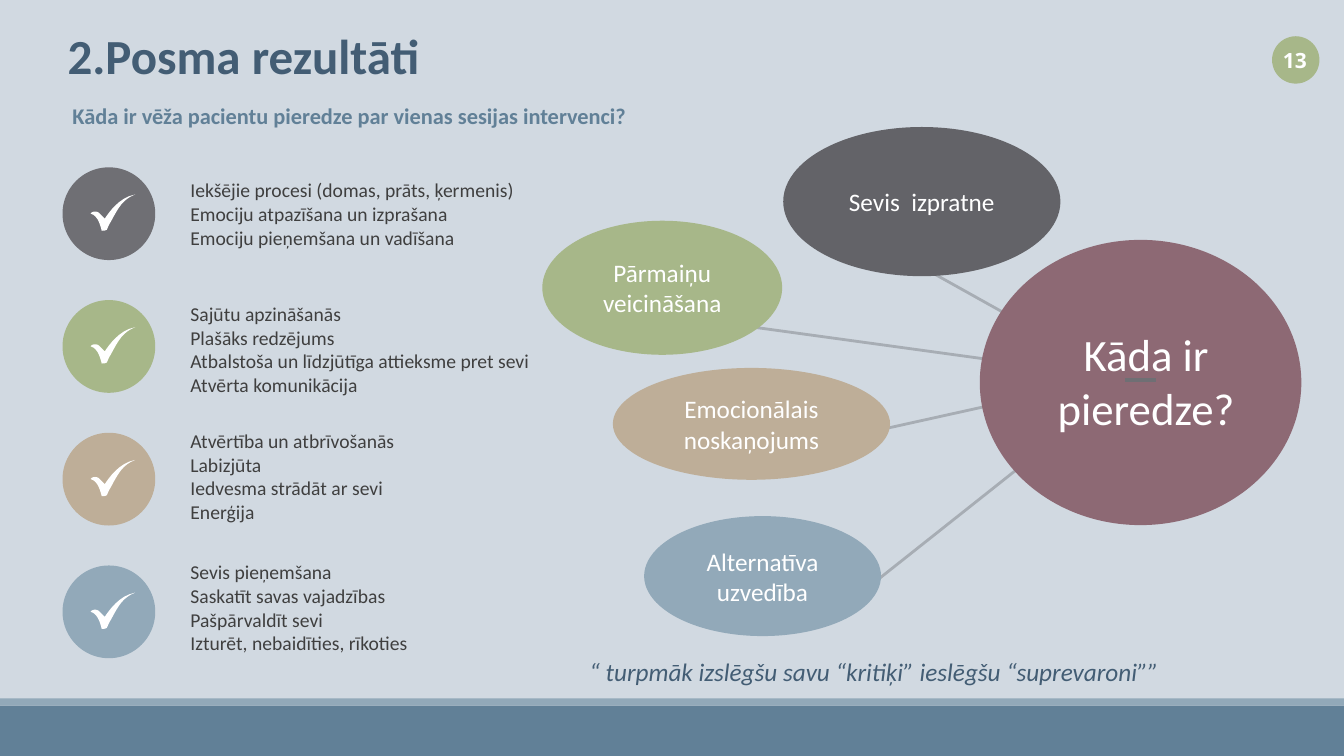
from pptx import Presentation
from pptx.dml.color import RGBColor
from pptx.enum.shapes import MSO_CONNECTOR, MSO_SHAPE
from pptx.enum.text import MSO_ANCHOR, PP_ALIGN
from pptx.oxml.ns import qn
from pptx.util import Pt
from lxml.etree import SubElement

PX = 9144  # 100 px to the inch
WIDTH, HEIGHT = 1333, 750

NAVY, STEEL, SKY = "435D74", "618097", "92A9B9"
GREEN, SAND, GREY, CHARCOAL = "A7B789", "BEAE98", "6F6F74", "636368"
PLUM, INK, WHITE, BACKGROUND = "8D6974", "3F3F3F", "FFFFFF", "D1D9E1"

TITLE = "2.Posma rezultāti"
QUESTION = "Kāda ir vēža pacientu pieredze par vienas sesijas intervenci?"
QUOTE = "“ turpmāk izslēgšu savu “kritiķi” ieslēgšu “suprevaroni””"
HUB = "Kāda ir pieredze?"
PAGE_NUMBER = "13"

# colour, top of the text, lines
FINDINGS = [
    (GREY, 172, ["Iekšējie procesi (domas, prāts, ķermenis)",
                 "Emociju atpazīšana un izprašana",
                 "Emociju pieņemšana un vadīšana"]),
    (GREEN, 295, ["Sajūtu apzināšanās",
                  "Plašāks redzējums",
                  "Atbalstoša un līdzjūtīga attieksme pret sevi",
                  "Atvērta komunikācija"]),
    (SAND, 421, ["Atvērtība un atbrīvošanās",
                 "Labizjūta",
                 "Iedvesma strādāt ar sevi",
                 "Enerģija"]),
    (SKY, 551, ["Sevis pieņemšana",
                "Saskatīt savas vajadzības",
                "Pašpārvaldīt sevi",
                "Izturēt, nebaidīties, rīkoties"]),
]
FIRST_BADGE, LAST_BADGE, BADGE_SIZE = 166, 561, 92

# text, colour, left, top, width, height
THEMES = [
    ("Sevis  izpratne", CHARCOAL, 777, 126, 275, 148),
    ("Pārmaiņu veicināšana", GREEN, 538, 219, 238, 133),
    ("Emocionālais noskaņojums", SAND, 608, 365, 275, 111),
    ("Alternatīva uzvedība", SKY, 639, 512, 235, 119),
]
SPOKES = [
    [(879, 245), (1110, 374), (866, 428)],
    [(729, 322), (1122, 376), (861, 583)],
]

# Cubic curves of the tick: two control points and an end point each
TICK_START = (0, 19)
TICK_CURVES = [
    ((1, 17), (5, 16), (8, 18)),
    ((10, 20), (12, 22), (14, 24)),
    ((18, 18), (28, 3), (44, 0)),
    ((32, 5), (28, 12), (20, 27)),
    ((18, 30), (17, 33), (16, 35)),
    ((14, 36), (13, 36), (11, 36)),
    ((10, 33), (8, 21), (0, 19)),
]
CURVE_STEPS = 8


def px(*lengths):
    return [round(length * PX) for length in lengths]


def colour(code):
    return RGBColor.from_string(code)


def write(shape, text, size, code, font="Calibri", bold=False, italic=False,
          align=PP_ALIGN.LEFT, anchor=MSO_ANCHOR.TOP, spacing=None):
    """Fill the shape with one paragraph per line of text."""
    frame = shape.text_frame
    frame.word_wrap = True
    frame.vertical_anchor = anchor
    frame.text = text
    for para in frame.paragraphs:
        para.alignment = align
        para.line_spacing = spacing
        for span in para.runs:
            span.font.name = font
            span.font.size = Pt(size)
            span.font.bold = bold
            span.font.italic = italic
            span.font.color.rgb = colour(code)


def add_text(page, place, text, size, code, **style):
    write(page.shapes.add_textbox(*px(*place)), text, size, code, **style)


def add_filled(shapes, kind, place, code):
    shape = shapes.add_shape(kind, *px(*place))
    paint(shape, code)
    return shape


def paint(shape, code):
    shape.shadow.inherit = False
    shape.fill.solid()
    shape.fill.fore_color.rgb = colour(code)
    shape.line.fill.background()


def add_outline(shapes, points, close):
    builder = shapes.build_freeform(*px(*points[0]))
    builder.add_line_segments([px(*point) for point in points[1:]], close=close)
    return builder.convert_to_shape()


def tick_points(left, top):
    """Flatten the tick's curves into points from the given corner."""
    points, start = [TICK_START], TICK_START
    for first, second, end in TICK_CURVES:
        for step in range(1, CURVE_STEPS + 1):
            t = step / CURVE_STEPS
            u = 1 - t
            points.append([u**3 * a + 3*u*u*t * b + 3*u*t*t * c + t**3 * d
                           for a, b, c, d in zip(start, first, second, end)])
        start = end
    return [(left + x, top + y) for x, y in points]


def add_frame(page):
    add_filled(page.shapes, MSO_SHAPE.RECTANGLE, (0, 700, WIDTH + 1, 50), STEEL)
    add_filled(page.shapes, MSO_SHAPE.RECTANGLE, (0, 693, WIDTH + 1, 7), SKY)
    add_filled(page.shapes, MSO_SHAPE.OVAL, (1262, 36, 47, 47), GREEN)
    add_text(page, (1249, 45, 71, 30), PAGE_NUMBER, 15, WHITE, font="Open Sans",
             bold=True, align=PP_ALIGN.CENTER, anchor=MSO_ANCHOR.MIDDLE)
    title = page.shapes.title
    title.left, title.top, title.width, title.height = px(57, 30, 1150, 59)
    write(title, TITLE, 35, NAVY, bold=True, anchor=MSO_ANCHOR.BOTTOM, spacing=0.85)


def add_mind_map(page):
    for points in SPOKES:
        spoke = add_outline(page.shapes, points, close=False)
        spoke.shadow.inherit = False
        spoke.fill.background()
        spoke.line.width = Pt(2)
        spoke.line.color.rgb = colour("000000")
        shade = spoke.line._ln.find(".//" + qn("a:srgbClr"))
        SubElement(shade, qn("a:alpha"), val="20000")

    add_filled(page.shapes, MSO_SHAPE.OVAL, (972, 238, 319, 283), PLUM)
    for text, code, *place in THEMES:
        theme = add_filled(page.shapes, MSO_SHAPE.OVAL, place, code)
        write(theme, text, 18, WHITE, align=PP_ALIGN.CENTER, anchor=MSO_ANCHOR.MIDDLE)
    add_text(page, (983, 319, 308, 118), HUB, 32, WHITE, align=PP_ALIGN.CENTER)

    dash = page.shapes.add_connector(MSO_CONNECTOR.STRAIGHT, *px(1116, 377, 1147, 377))
    dash.line.width = Pt(3)
    dash.line.color.rgb = colour(GREY)
    SubElement(dash._element.spPr, qn("a:effectLst"))


def add_findings(page):
    pitch = (LAST_BADGE - FIRST_BADGE) / (len(FINDINGS) - 1)
    for row, (code, text_top, lines) in enumerate(FINDINGS):
        top = FIRST_BADGE + row * pitch
        badge = page.shapes.add_group_shape()
        add_filled(badge.shapes, MSO_SHAPE.OVAL, (62, top, BADGE_SIZE, BADGE_SIZE), code)
        paint(add_outline(badge.shapes, tick_points(90, top + 27), close=True), WHITE)
        add_text(page, (179, text_top, 379, 108), "\n".join(lines), 14, INK)


def main():
    deck = Presentation()
    deck.slide_width, deck.slide_height = px(WIDTH + 1 / 3, HEIGHT)
    page = deck.slides.add_slide(deck.slide_layouts[5])
    page.background.fill.solid()
    page.background.fill.fore_color.rgb = colour(BACKGROUND)
    add_frame(page)
    add_mind_map(page)
    add_findings(page)
    add_text(page, (62, 96, 1160, 64), QUESTION, 16, STEEL, bold=True)
    add_text(page, (575, 646, 726, 40), QUOTE, 18, NAVY, italic=True)
    deck.save("out.pptx")


if __name__ == "__main__":
    main()
